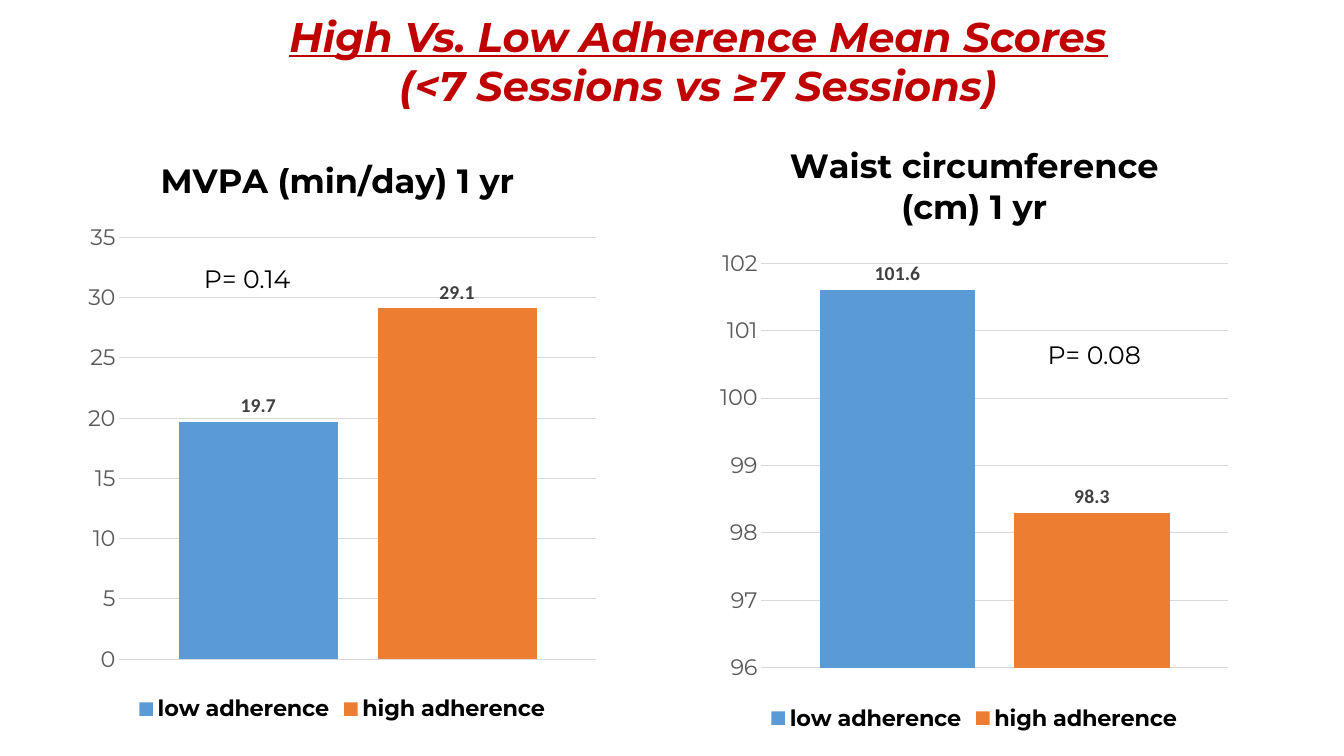
from pptx import Presentation
from pptx.chart.data import CategoryChartData
from pptx.dml.color import RGBColor
from pptx.enum.chart import (XL_CHART_TYPE as Kind, XL_LABEL_POSITION as Spot,
                             XL_LEGEND_POSITION as Side, XL_TICK_MARK as Tick)
from pptx.enum.text import MSO_ANCHOR as Anchor, MSO_AUTO_SIZE as Fit, PP_ALIGN as Align
from pptx.util import Inches, Pt

COLORS = {
    "title": "C00000", "text": "000000", "axis": "595959", "grid": "D9D9D9",
    "label": "404040", "low": "5B9BD5", "high": "ED7D31",
}
FONT = "Montserrat"
UNIT = Inches(1 / 12)  # the slide is a grid of 160 columns by 90 rows


def rgb(key):
    return RGBColor.from_string(COLORS[key])


def grid(*cells):
    """Turn columns and rows into a box: left, top, width, height."""
    return [round(n * UNIT) for n in cells]


def style(font, size, key, name=FONT, bold=False):
    font.size = Pt(size)
    font.name = name
    font.bold = bold
    font.color.rgb = rgb(key)


def add_title(slide, box, lines):
    title = slide.shapes.title
    title.left, title.top, title.width, title.height = box
    frame = title.text_frame
    frame.text = "\n".join(lines)
    frame.word_wrap = True
    frame.auto_size = Fit.NONE
    frame.vertical_anchor = Anchor.MIDDLE
    for i, para in enumerate(frame.paragraphs):
        para.alignment = Align.CENTER
        for run in para.runs:
            style(run.font, 29.6, "title", bold=True)
            run.font.italic = True
            run.font.underline = i == 0


def add_note(slide, box, text, share):
    """Place the P value at a share of the chart's box."""
    left, top, width, height = box
    x, y = share
    note = slide.shapes.add_textbox(round(left + x * width), round(top + y * height),
                                    *grid(14.64, 4.8))
    frame = note.text_frame
    frame.text = text
    frame.word_wrap = False
    frame.auto_size = Fit.SHAPE_TO_FIT_TEXT
    style(frame.paragraphs[0].runs[0].font, 18, "text")


def style_axes(chart, scale):
    chart.category_axis.visible = False
    axis = chart.value_axis
    axis.minimum_scale, axis.maximum_scale, axis.major_unit = scale
    axis.major_tick_mark = axis.minor_tick_mark = Tick.NONE
    axis.format.line.fill.background()
    style(axis.tick_labels.font, 16, "axis")
    axis.tick_labels.number_format = "General"
    axis.tick_labels.number_format_is_linked = False
    line = axis.major_gridlines.format.line
    line.color.rgb = rgb("grid")
    line.width = Pt(0.75)


def style_bars(plot):
    plot.gap_width = 75
    plot.overlap = -25
    plot.vary_by_categories = False
    for bar, key in zip(plot.series, ("low", "high")):
        bar.format.fill.solid()
        bar.format.fill.fore_color.rgb = rgb(key)
        labels = bar.data_labels
        labels.show_value = True
        labels.position = Spot.OUTSIDE_END
        style(labels.font, 14, "label", "Calibri", True)


def add_panel(slide, box, name, means, scale, note, share):
    data = CategoryChartData()
    data.categories = ["1"]
    for group, mean in zip(("low adherence", "high adherence"), means):
        data.add_series(group, [mean])
    chart = slide.shapes.add_chart(Kind.COLUMN_CLUSTERED, *box, data).chart
    style(chart.font, 10, "text", "Calibri")

    chart.has_title = True
    frame = chart.chart_title.text_frame
    frame.text = name
    style(frame.paragraphs[0].runs[0].font, 24, "text", bold=True)
    chart.chart_title.include_in_layout = False

    chart.has_legend = True
    chart.legend.position = Side.BOTTOM
    chart.legend.include_in_layout = False
    style(chart.legend.font, 16, "text", bold=True)

    style_axes(chart, scale)
    style_bars(chart.plots[0])
    add_note(slide, box, note, share)


def main():
    deck = Presentation()
    deck.slide_width, deck.slide_height = grid(160, 90)
    slide = deck.slides.add_slide(deck.slide_layouts[5])
    add_title(slide, grid(21.12, 1.44, 124.08, 11.52),
              ["High Vs. Low Adherence Mean Scores", "(<7 Sessions vs ≥7 Sessions)"])
    add_panel(slide, grid(9.24, 15.96, 63, 70.56), "MVPA (min/day) 1 yr ",
              (19.7, 29.1), (0, 35, 5), "P= 0.14", (0.22, 0.21))
    add_panel(slide, grid(84.48, 14.04, 63, 73.56), "Waist circumference (cm) 1 yr",
              (101.6, 98.3), (96, 102, 1), "P= 0.08", (0.62, 0.35))
    deck.save("out.pptx")


if __name__ == "__main__":
    main()
